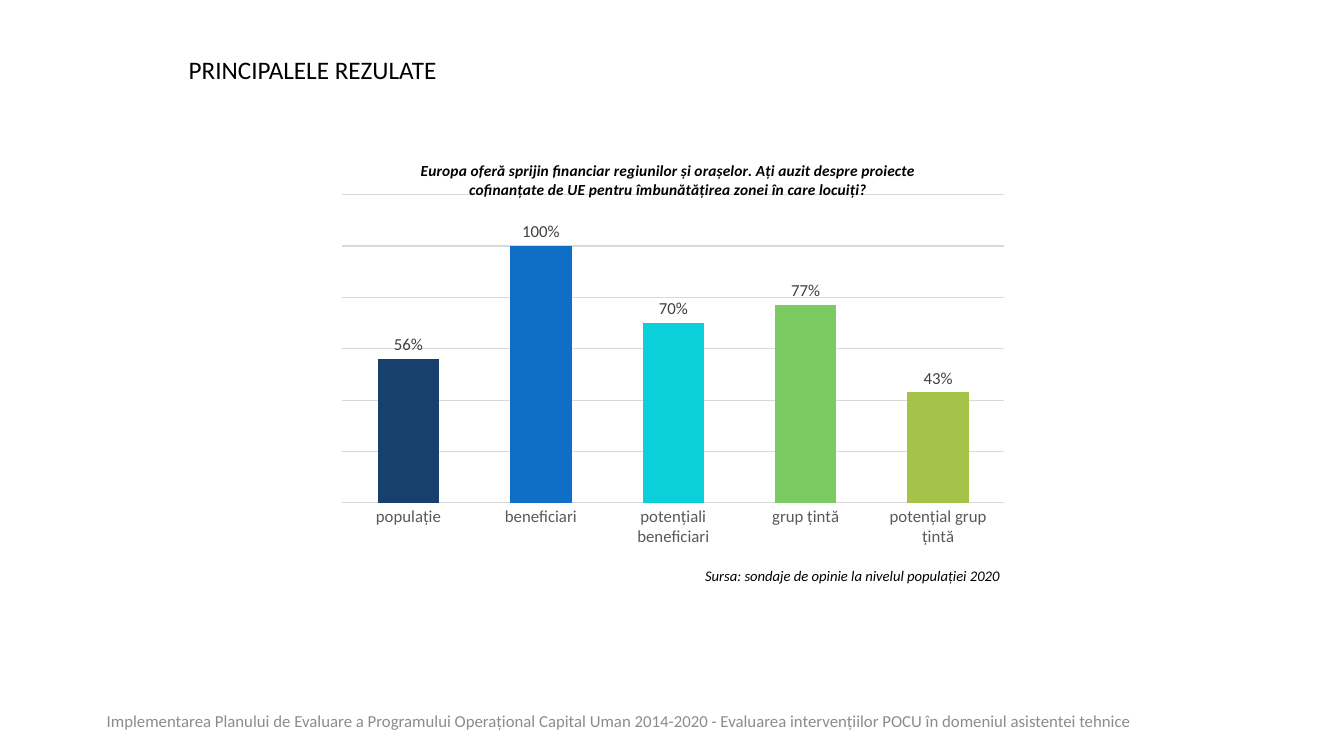
from pptx import Presentation
from pptx.chart.data import CategoryChartData
from pptx.dml.color import RGBColor
from pptx.enum.chart import XL_CHART_TYPE, XL_LABEL_POSITION, XL_TICK_MARK
from pptx.enum.text import MSO_ANCHOR, MSO_AUTO_SIZE, PP_ALIGN
from pptx.oxml import parse_xml
from pptx.oxml.ns import nsdecls
from pptx.util import Cm, Pt

COLUMNS = XL_CHART_TYPE.COLUMN_CLUSTERED
OUTSIDE_END = XL_LABEL_POSITION.OUTSIDE_END
NO_TICK = XL_TICK_MARK.NONE
TOP, MIDDLE = MSO_ANCHOR.TOP, MSO_ANCHOR.MIDDLE
LEFT, RIGHT = PP_ALIGN.LEFT, PP_ALIGN.RIGHT
NO_AUTOFIT = MSO_AUTO_SIZE.NONE

FONT = "Calibri"
BLACK, GRID = "000000", "D9D9D9"

QUESTION = ("Europa oferă sprijin financiar regiunilor și orașelor. Ați auzit despre "
            "proiecte cofinanțate de UE pentru îmbunătățirea zonei în care locuiți?")
# Respondent group, share, bar colour
AWARENESS = [
    ("populație", 0.56, "17406D"),
    ("beneficiari", 1, "0F6FC6"),
    ("potențiali beneficiari", 0.7, "0BD0D9"),
    ("grup țintă", 0.77, "7CCA62"),
    ("potențial grup țintă", 0.43, "A5C249"),
]
PLOT_AREA = {"x": 0.023, "y": 0.123, "w": 0.969, "h": 0.737}


def rgb(hex_code):
    return RGBColor.from_string(hex_code)


def style_font(font, size, color, bold=False, italic=False):
    font.name = FONT
    font.size = Pt(size)
    font.bold = bold
    font.italic = italic
    font.color.rgb = rgb(color)


def style_line(line):
    line.color.rgb = rgb(GRID)
    line.width = Pt(0.75)


def write(sp, text, size, color, align=LEFT, anchor=TOP, italic=False):
    tf = sp.text_frame
    tf.word_wrap = True
    tf.auto_size = NO_AUTOFIT
    tf.vertical_anchor = anchor
    p = tf.paragraphs[0]
    p.alignment = align
    p.line_spacing = 1.0
    p.space_before = Pt(0)
    r = p.add_run()
    r.text = text
    style_font(r.font, size, color, italic=italic)


def add_title(s, text, left, top, width, height):
    sp = s.shapes.title
    sp.left, sp.top, sp.width, sp.height = left, top, width, height
    write(sp, text, 18, BLACK)


def add_text(s, box, *args, **kwargs):
    write(s.shapes.add_textbox(*box), *args, **kwargs)


def set_plot_area(chart):
    """Fix the inner plot area as fractions of the chart frame."""
    plot_area = chart.element.xpath("c:chart/c:plotArea")[0]
    for layout in plot_area.xpath("c:layout"):
        plot_area.remove(layout)
    modes = "".join(f'<c:{k}Mode val="edge"/>' for k in "xy")
    sizes = "".join(f'<c:{k} val="{v}"/>' for k, v in PLOT_AREA.items())
    plot_area.insert(0, parse_xml(
        f'<c:layout {nsdecls("c")}><c:manualLayout><c:layoutTarget val="inner"/>'
        f'{modes}{sizes}</c:manualLayout></c:layout>'))


def add_awareness_chart(s, left, top, width, height):
    data = CategoryChartData(number_format="0%")
    data.categories = [group for group, _, _ in AWARENESS]
    data.add_series("Series 1", [share for _, share, _ in AWARENESS])
    chart = s.shapes.add_chart(COLUMNS, left, top, width, height, data).chart
    style_font(chart.font, 10, BLACK)
    chart.has_legend = False

    # Question as chart title
    r = chart.chart_title.text_frame.paragraphs[0].add_run()
    r.text = QUESTION
    style_font(r.font, 11, BLACK, bold=True, italic=True)

    # Axes
    groups, shares = chart.category_axis, chart.value_axis
    groups.major_tick_mark = NO_TICK
    style_font(groups.tick_labels.font, 12, "595959")
    style_line(groups.format.line)
    shares.visible = False
    shares.minimum_scale, shares.maximum_scale, shares.major_unit = 0, 1.2, 0.2
    style_line(shares.major_gridlines.format.line)

    # Bars and labels
    plot = chart.plots[0]
    plot.gap_width, plot.overlap = 115, 58
    plot.vary_by_categories = False
    series = plot.series[0]
    for i, (_, _, color) in enumerate(AWARENESS):
        fill = series.points[i].format.fill
        fill.solid()
        fill.fore_color.rgb = rgb(color)
    labels = series.data_labels
    labels.show_value = True
    labels.number_format, labels.number_format_is_linked = "0%", False
    labels.position = OUTSIDE_END
    style_font(labels.font, 12, "404040")
    set_plot_area(chart)


def main():
    prs = Presentation()
    prs.slide_width, prs.slide_height = Cm(33.87), Cm(19.05)
    s = prs.slides.add_slide(prs.slide_layouts[5])

    add_title(s, "PRINCIPALELE REZULATE", Cm(4.5), Cm(1.24), Cm(18.21), Cm(1.02))
    add_awareness_chart(s, Cm(8.23), Cm(3.61), Cm(17.22), Cm(10.54))
    # Source and footer
    add_text(s, (Cm(11.94), Cm(14.15), Cm(13.51), Cm(0.74)),
             "Sursa: sondaje de opinie la nivelul populației 2020",
             10.5, BLACK, align=RIGHT, italic=True)
    add_text(s, (Cm(2.44), Cm(17.65), Cm(28.42), Cm(1.02)),
             "Implementarea Planului de Evaluare a Programului Operațional Capital Uman "
             "2014-2020 - Evaluarea intervențiilor POCU în domeniul asistentei tehnice",
             12, "8C8C8C", anchor=MIDDLE)
    prs.save("out.pptx")


if __name__ == "__main__":
    main()
